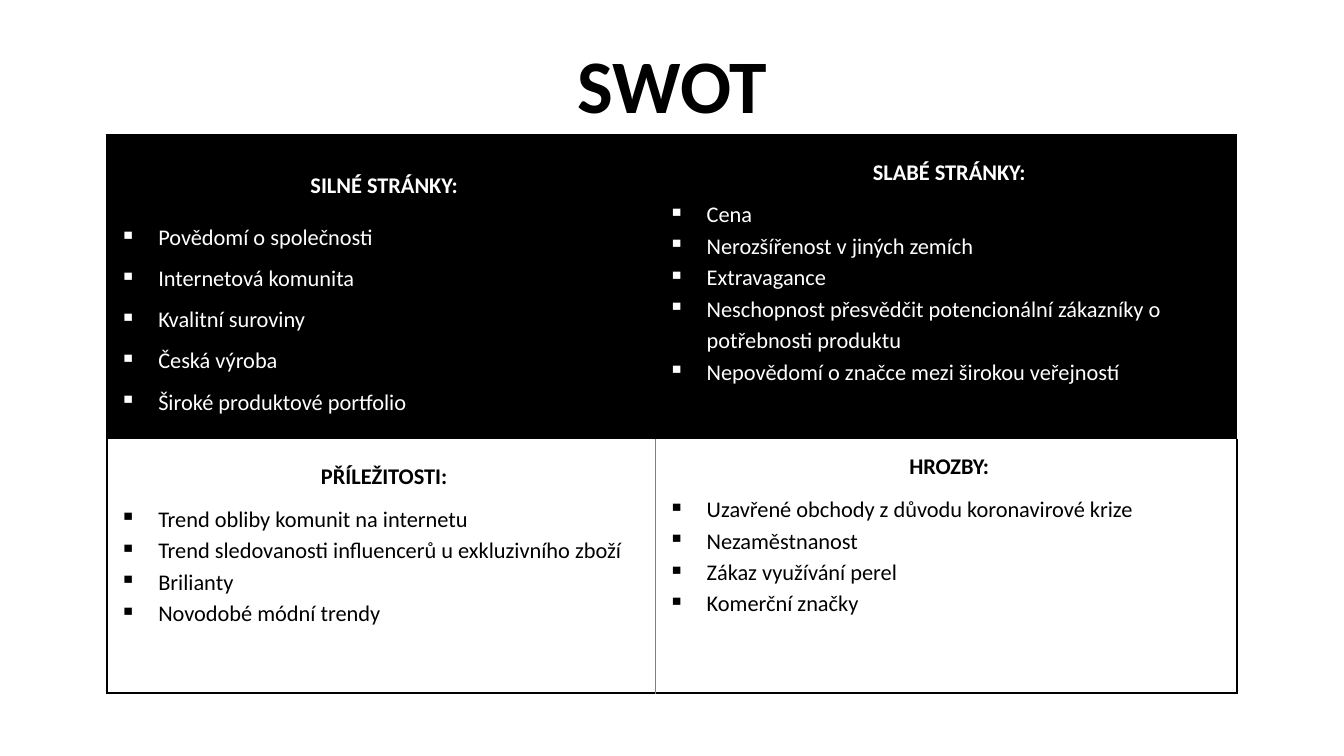
from dataclasses import dataclass

from lxml import etree
from pptx import Presentation
from pptx.dml.color import RGBColor
from pptx.enum.text import MSO_ANCHOR, PP_ALIGN
from pptx.oxml.ns import qn
from pptx.util import Inches, Pt

CENTER, LEFT = PP_ALIGN.CENTER, PP_ALIGN.LEFT
TOP, MIDDLE, BOTTOM = MSO_ANCHOR.TOP, MSO_ANCHOR.MIDDLE, MSO_ANCHOR.BOTTOM


@dataclass(frozen=True)
class Theme:
    font: str = "Calibri"
    black: str = "000000"
    white: str = "FFFFFF"
    gray: str = "808080"
    title: int = 54
    body: int = 16


THEME = Theme()
THICK = (THEME.black, 1.5)
THIN = (THEME.gray, 0.5)


@dataclass(frozen=True)
class Part:
    """One SWOT field; edges maps L, R, T, B to a colour and a width."""
    head: str
    items: tuple[str, ...]
    edges: dict[str, tuple[str, float]]
    dark: bool = False
    lead: float = 1.15
    gap: float = 1.5
    base: float = 0.1


PARTS = (
    (
        Part("SILNÉ STRÁNKY:",
             ("Povědomí o společnosti", "Internetová komunita",
              "Kvalitní suroviny", "Česká výroba",
              "Široké produktové portfolio"),
             {"L": THICK, "R": THICK, "T": THICK}, dark=True, lead=1.5),
        Part("SLABÉ STRÁNKY:",
             ("Cena", "Nerozšířenost v\u00a0jiných zemích", "Extravagance",
              "Neschopnost přesvědčit potencionální zákazníky o "
              "potřebnosti produktu",
              "Nepovědomí o značce mezi širokou veřejností"),
             {"L": THICK, "T": THICK}, dark=True, base=0.57),
    ),
    (
        Part("PŘÍLEŽITOSTI:",
             ("Trend obliby komunit na internetu",
              "Trend sledovanosti influencerů u exkluzivního zboží",
              "Brilianty", "Novodobé módní trendy"),
             {"L": THICK, "R": THIN, "B": THICK}),
        Part("HROZBY:",
             ("Uzavřené obchody z\u00a0důvodu koronavirové krize",
              "Nezaměstnanost", "Zákaz využívání perel", "Komerční značky"),
             {"L": THIN, "R": THICK, "B": THICK}, gap=1.15),
    ),
)


def style(para, size: int, color: str, bold: bool) -> None:
    font = para.font
    font.name, font.size, font.bold = THEME.font, Pt(size), bold
    font.color.rgb = RGBColor.from_string(color)


def add_mark(para) -> None:
    """Give the paragraph a square bullet with a hanging indent."""
    props = para._p.get_or_add_pPr()
    props.set("marL", str(Inches(0.38)))
    props.set("indent", str(-Inches(0.38)))
    etree.SubElement(props, qn("a:buChar"), char="▪")


def add_edges(cell, edges: dict[str, tuple[str, float]]) -> None:
    props = cell._tc.get_or_add_tcPr()
    for side in "LRTB":
        line = etree.SubElement(props, qn(f"a:ln{side}"))
        if side not in edges:
            etree.SubElement(line, qn("a:noFill"))
            continue
        color, width = edges[side]
        line.set("w", str(Pt(width)))
        fill = etree.SubElement(line, qn("a:solidFill"))
        etree.SubElement(fill, qn("a:srgbClr"), val=color)


def fill_cell(cell, part: Part) -> None:
    add_edges(cell, part.edges)
    if part.dark:
        cell.fill.solid()
        cell.fill.fore_color.rgb = RGBColor.from_string(THEME.black)
    else:
        cell.fill.background()
    cell.vertical_anchor = MIDDLE if part.dark else TOP
    cell.margin_left, cell.margin_right = Inches(0.13), Inches(0.07)
    cell.margin_top, cell.margin_bottom = Inches(0.1), Inches(part.base)

    color = THEME.white if part.dark else THEME.black
    frame = cell.text_frame
    head = frame.paragraphs[0]
    head.text, head.alignment = part.head, CENTER
    head.line_spacing, head.space_after = part.gap, Pt(8)
    style(head, THEME.body, color, True)
    for item in part.items:
        para = frame.add_paragraph()
        para.text, para.alignment = item, LEFT
        para.line_spacing = part.lead
        para.space_after = Pt(8 if item == part.items[-1] else 0)
        add_mark(para)
        style(para, THEME.body, color, False)


def add_title(slide, text: str) -> None:
    box = slide.shapes.add_textbox(
        Inches(0.92), Inches(0.32), Inches(11.5), Inches(1.02))
    frame = box.text_frame
    frame.word_wrap, frame.vertical_anchor = True, BOTTOM
    para = frame.paragraphs[0]
    para.text, para.alignment, para.line_spacing = text, CENTER, 0.9
    style(para, THEME.title, THEME.black, True)


def add_grid(slide) -> None:
    table = slide.shapes.add_table(
        2, 2, Inches(1.06), Inches(1.34), Inches(11.21), Inches(5.52)).table
    table.first_row = table.horz_banding = False
    for col, width in zip(table.columns, (5.44, 5.77)):
        col.width = Inches(width)
    for row, height, parts in zip(table.rows, (3, 2.52), PARTS):
        row.height = Inches(height)
        for cell, part in zip(row.cells, parts):
            fill_cell(cell, part)


def main() -> None:
    deck = Presentation()
    deck.slide_width, deck.slide_height = Inches(13.33), Inches(7.5)
    slide = deck.slides.add_slide(deck.slide_layouts[6])
    add_title(slide, "SWOT")
    add_grid(slide)
    deck.save("out.pptx")


if __name__ == "__main__":
    main()
